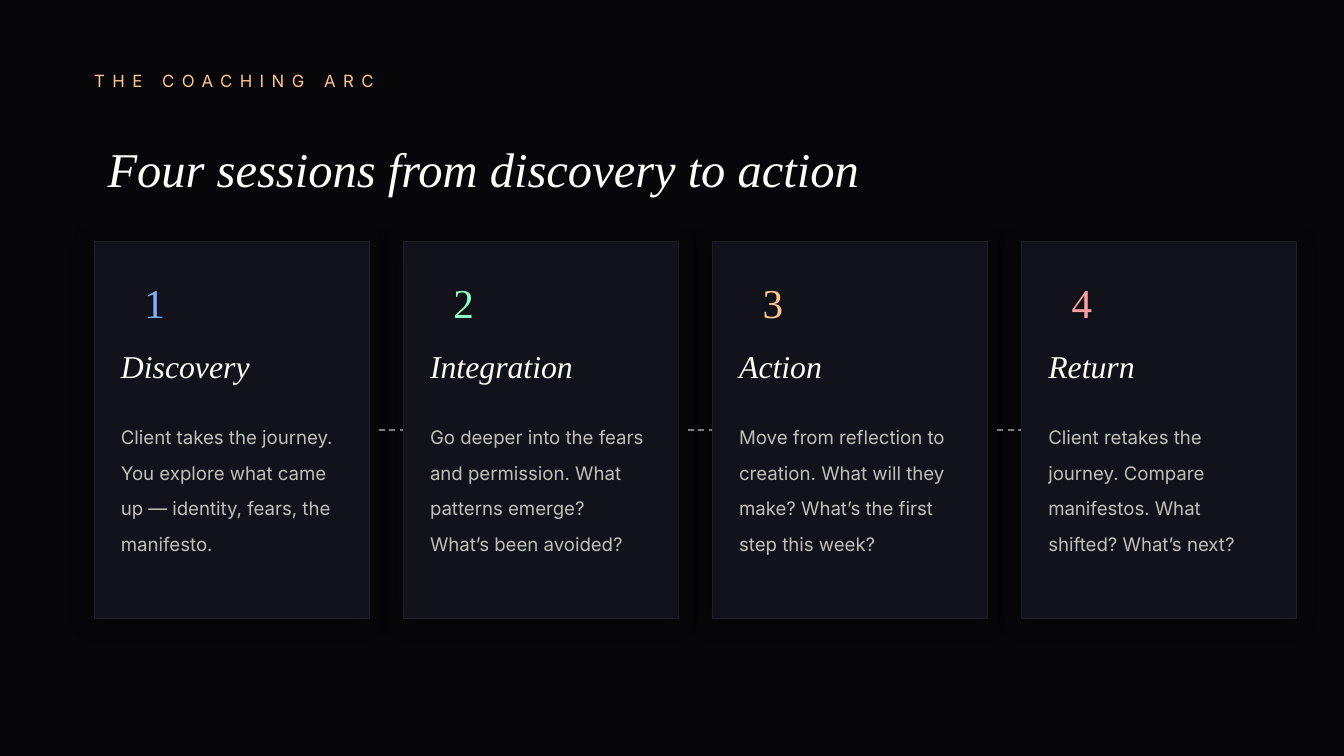
from lxml.etree import SubElement
from pptx import Presentation
from pptx.dml.color import RGBColor
from pptx.enum.dml import MSO_LINE
from pptx.enum.shapes import MSO_CONNECTOR, MSO_SHAPE
from pptx.enum.text import MSO_ANCHOR, MSO_AUTO_SIZE, PP_ALIGN
from pptx.oxml.ns import qn
from pptx.util import Emu, Pt

EMU_PER_PX = 4572  # 200 px to the inch

SERIF, SANS = "Times New Roman", "Inter"
BACKGROUND, CARD_FILL, CARD_LINE = "07070A", "12121A", "1E1E28"
IVORY, BODY_GREY, DASH_GREY, PEACH = "FFFDF9", "C1BFBD", "7E7D7C", "FFC78F"

CARD_LEFT, CARD_TOP, CARD_WIDTH, CARD_HEIGHT = 140, 360, 410, 560
CARD_STEP, CARD_PADDING, DASH_LENGTH = 460, 40, 36

SESSIONS = [
    ("Discovery", "82AFFF",
     "Client takes the journey. You explore what came up — identity, fears, the manifesto."),
    ("Integration", "8DFFC0",
     "Go deeper into the fears and permission. What patterns emerge? What’s been avoided?"),
    ("Action", PEACH,
     "Move from reflection to creation. What will they make? What’s the first step this week?"),
    ("Return", "FFA0A0",
     "Client retakes the journey. Compare manifestos. What shifted? What’s next?"),
]


def px(*lengths):
    return [Emu(length * EMU_PER_PX) for length in lengths]


def color(hex_string):
    return RGBColor.from_string(hex_string)


def write(shape, text, *, font, size, fill, italic=False, align=PP_ALIGN.LEFT,
          line_spacing=None, tracking=None, insets=(0, 0, 0, 0)):
    """Fill a shape with one formatted paragraph; tracking is in points."""
    frame = shape.text_frame
    frame.word_wrap = True
    frame.auto_size = MSO_AUTO_SIZE.NONE
    frame.vertical_anchor = MSO_ANCHOR.MIDDLE
    (frame.margin_left, frame.margin_top,
     frame.margin_right, frame.margin_bottom) = px(*insets)
    paragraph = frame.paragraphs[0]
    paragraph.alignment = align
    if line_spacing:
        paragraph.line_spacing = line_spacing
    run = paragraph.add_run()
    run.text = text
    run.font.name = font
    run.font.size = Pt(size)
    run.font.italic = italic
    run.font.color.rgb = color(fill)
    if tracking:
        run.font._element.set("spc", str(tracking * 100))


class SlideBuilder:
    def __init__(self, slide):
        self.slide = slide
        background = slide.background.fill
        background.solid()
        background.fore_color.rgb = color(BACKGROUND)

    def title(self, text, left, top, width, height):
        title = self.slide.shapes.title
        title.left, title.top, title.width, title.height = px(left, top, width, height)
        write(title, text, font=SERIF, size=26, fill=IVORY, italic=True,
              insets=(20, 10, 20, 10))

    def text(self, text, left, top, width, height, **style):
        box = self.slide.shapes.add_textbox(*px(left, top, width, height))
        write(box, text, **style)

    def card(self, left, top, width, height):
        card = self.slide.shapes.add_shape(
            MSO_SHAPE.RECTANGLE, *px(left, top, width, height))
        card.fill.solid()
        card.fill.fore_color.rgb = color(CARD_FILL)
        card.line.color.rgb = color(CARD_LINE)
        card.line.width = Pt(0.5)
        card.shadow.inherit = False
        effects = card._element.spPr.find(qn("a:effectLst"))
        shadow = SubElement(effects, qn("a:outerShdw"), blurRad=str(Pt(12)),
                            dist=str(Pt(2)), dir=str(135 * 60000),
                            algn="bl", rotWithShape="0")
        shade = SubElement(shadow, qn("a:srgbClr"), val="000000")
        SubElement(shade, qn("a:alpha"), val="30000")
        return card

    def dash_into(self, card, left, middle):
        """Draw a short dashed line that ends at the middle of the card's left side."""
        connector = self.slide.shapes.add_connector(
            MSO_CONNECTOR.STRAIGHT, *px(left - DASH_LENGTH, middle, left, middle))
        connector.end_connect(card, 1)
        connector.line.color.rgb = color(DASH_GREY)
        connector.line.width = Pt(0.8)
        connector.line.dash_style = MSO_LINE.DASH
        SubElement(connector._element.spPr, qn("a:effectLst"))

    def session(self, number, name, accent, summary):
        left = CARD_LEFT + (number - 1) * CARD_STEP
        inner = left + CARD_PADDING
        card = self.card(left, CARD_TOP, CARD_WIDTH, CARD_HEIGHT)
        self.text(str(number), inner, 400, 100, 100, font=SERIF, size=22,
                  fill=accent, align=PP_ALIGN.CENTER)
        self.text(name, inner, 510, 320, 70, font=SERIF, size=17,
                  fill=IVORY, italic=True)
        self.text(summary, inner, 590, 320, 260, font=SANS, size=10,
                  fill=BODY_GREY, line_spacing=1.6)
        if number > 1:
            self.dash_into(card, left, CARD_TOP + CARD_HEIGHT // 2)


def main():
    presentation = Presentation()
    presentation.slide_width, presentation.slide_height = px(2000, 1125)
    slide = presentation.slides.add_slide(presentation.slide_layouts[5])
    builder = SlideBuilder(slide)
    builder.text("THE COACHING ARC", 140, 80, 800, 80, font=SANS, size=9,
                 fill=PEACH, tracking=4)
    builder.title("Four sessions from discovery to action", 140, 180, 1600, 140)
    for number, session in enumerate(SESSIONS, start=1):
        builder.session(number, *session)
    presentation.save("out.pptx")


if __name__ == "__main__":
    main()
